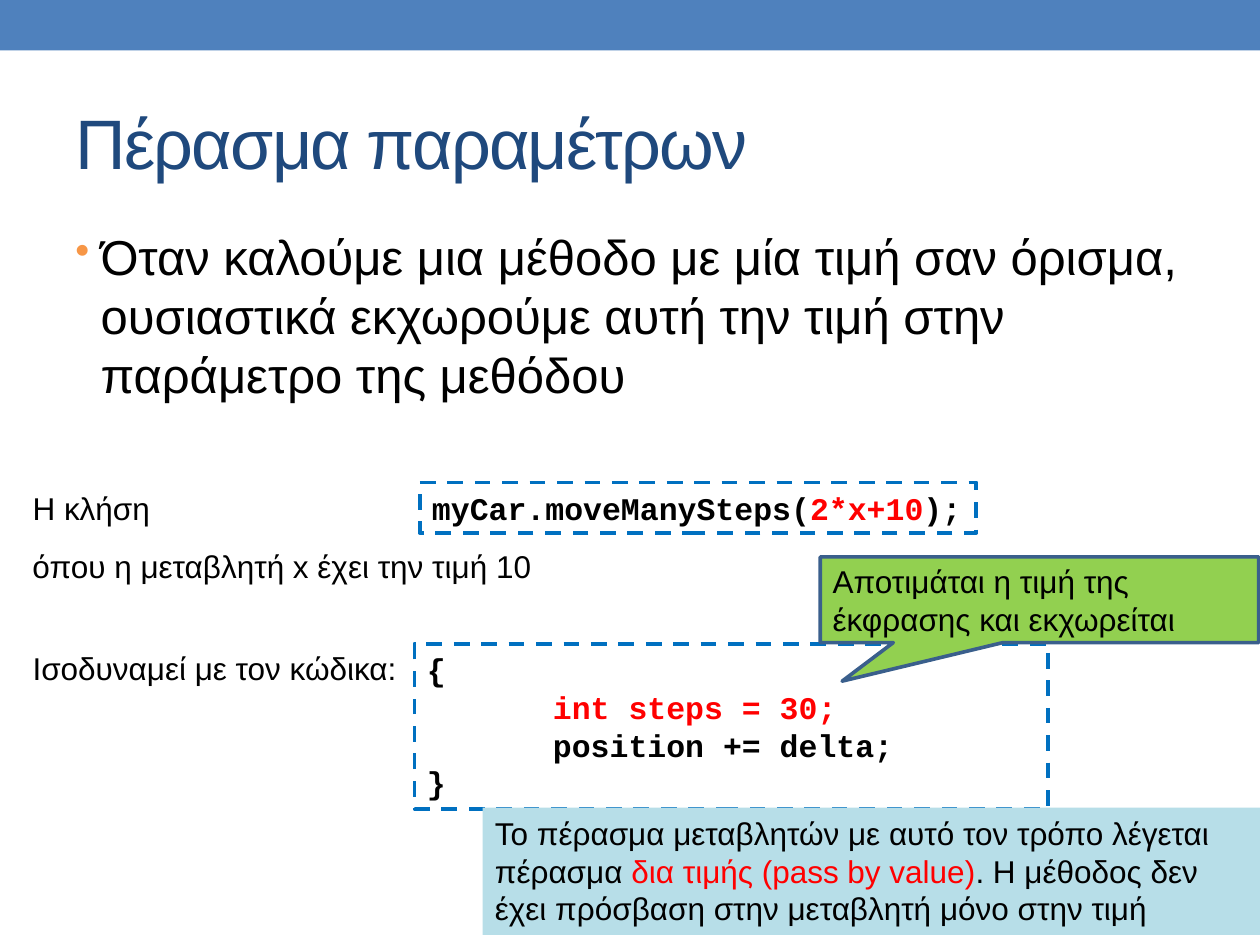
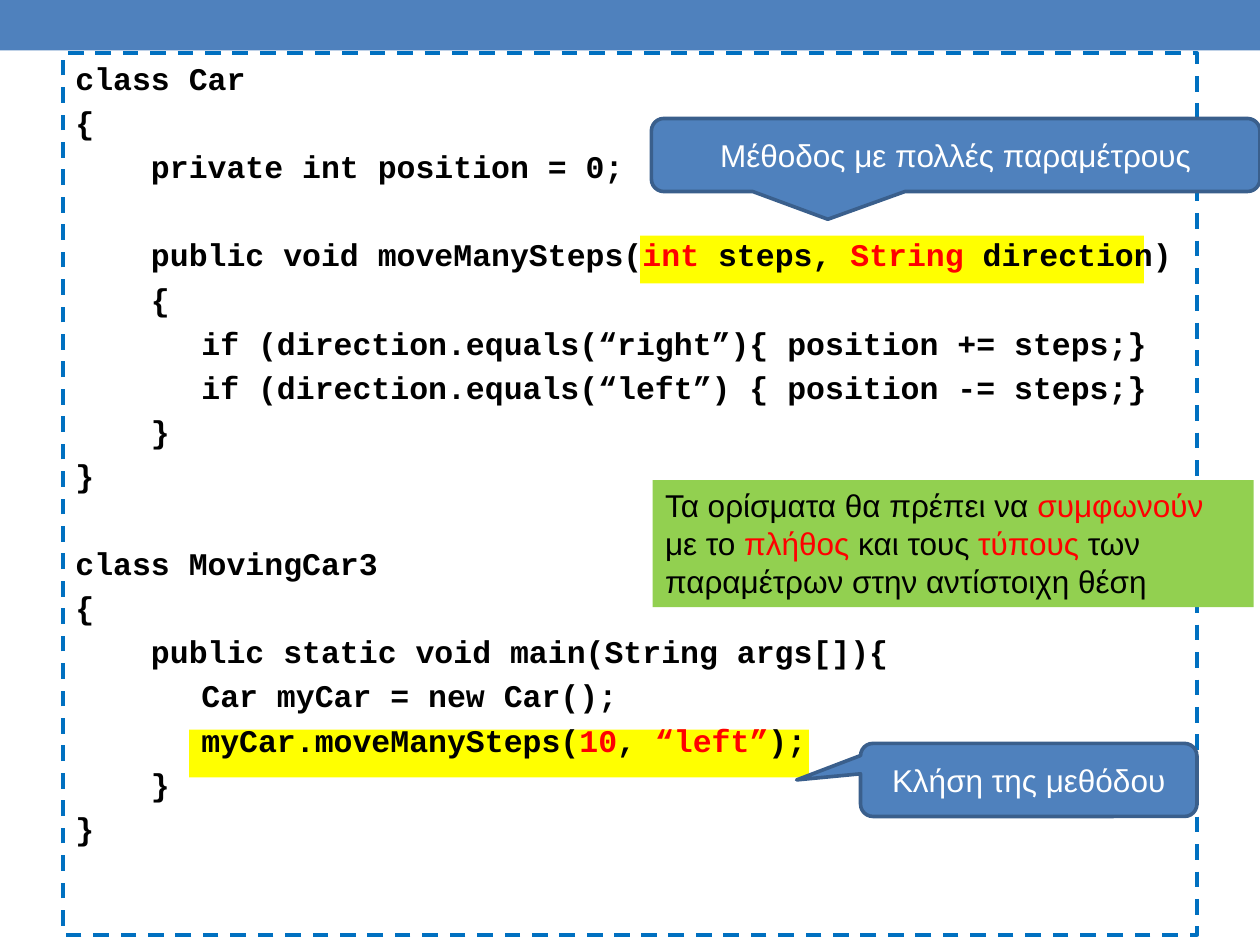
from lxml import etree
from pptx import Presentation
from pptx import util as u
from pptx.dml.color import RGBColor
from pptx.enum import dml, shapes, text
from pptx.oxml.ns import qn

SCALE = 9144  # EMU in one px, 100 px to the inch
HUES = {
    "band": "4F81BD", "title": "1F497D", "bullet": "F79646", "dash": "0070C0",
    "edge": "3A5F8C", "green": "92D050", "pale": "B7DEE8", "mark": "FFFF00",
    "ink": "000000", "red": "FF0000", "white": "FFFFFF",
}
PROSE = {"name": "Arial", "size": u.Pt(18), "bold": False}
CODE = {"name": "Courier New", "size": u.Pt(18), "bold": True}
HEAD = {**PROSE, "size": u.Pt(40)}
POINT = {**PROSE, "size": u.Pt(28)}
STEPS = (0, 60, 100)  # code indents in px
LEAD = 3.6            # points before a code line
SKIP = 28.8           # points before a new block of code

RECT = shapes.MSO_SHAPE.RECTANGLE
SPEECH = shapes.MSO_SHAPE.RECTANGULAR_CALLOUT
ROUND = shapes.MSO_SHAPE.ROUNDED_RECTANGULAR_CALLOUT
LEFT, MID = text.PP_ALIGN.LEFT, text.PP_ALIGN.CENTER


def px(n):
    return u.Emu(n * SCALE)


def hue(name):
    return RGBColor.from_string(HUES[name])


def put(thing, values):
    for key, value in values.items():
        setattr(thing, key, value)


class Deck:
    def __init__(self):
        self.prs = Presentation()
        put(self.prs, {"slide_width": px(1000), "slide_height": px(750)})
        self.slide = None

    def page(self, title=None):
        """Start a slide with its band, and a title if there is one."""
        layout = self.prs.slide_layouts[5 if title else 6]
        self.slide = self.prs.slides.add_slide(layout)
        self.box((0, 0, 1000, 40), fill="band")
        if title:
            head = self.slide.shapes.title
            spots = map(px, (50, 58, 900, 108))
            put(head, dict(zip(("left", "top", "width", "height"), spots)))
            self.frame(head, True, True)
            para = head.text_frame.paragraphs[0]
            self.runs(para, title, HEAD, "title")
            para.runs[0]._r.get_or_add_rPr().set("spc", "-100")

    def frame(self, shape, wrap=True, middle=False):
        anchor = text.MSO_ANCHOR.MIDDLE if middle else text.MSO_ANCHOR.TOP
        put(shape.text_frame, {"word_wrap": wrap, "vertical_anchor": anchor,
                               "auto_size": text.MSO_AUTO_SIZE.NONE})

    def runs(self, para, words, font=PROSE, ink="ink", align=LEFT):
        """Write words split by |, with every second piece in red."""
        para.alignment = align
        for i, piece in enumerate(words.split("|")):
            run = para.add_run()
            run.text = piece
            put(run.font, font)
            run.font.color.rgb = hue("red" if i % 2 else ink)

    def box(self, at, fill=None, line=None, width=2.25, kind=RECT):
        shape = self.slide.shapes.add_shape(kind, *map(px, at))
        shape.shadow.inherit = False
        if fill:
            shape.fill.solid()
            shape.fill.fore_color.rgb = hue(fill)
        else:
            shape.fill.background()
        if line:
            shape.line.color.rgb = hue(line)
            shape.line.width = u.Pt(width)
        else:
            shape.line.fill.background()
        return shape

    def label(self, at, words, font=PROSE, wrap=False):
        shape = self.slide.shapes.add_textbox(*map(px, at))
        self.frame(shape, wrap)
        para = shape.text_frame.paragraphs[0]
        self.runs(para, words, font)
        return para

    def point(self, at, words):
        """Add a text box with one bulleted paragraph."""
        props = self.label(at, words, POINT, True)._p.get_or_add_pPr()
        props.set("marL", str(px(20)))
        props.set("indent", str(px(-20)))
        tint = etree.SubElement(props, qn("a:buClr"))
        etree.SubElement(tint, qn("a:srgbClr"), val=HUES["bullet"])
        etree.SubElement(props, qn("a:buSzPct"), val="85000")
        etree.SubElement(props, qn("a:buChar"), char="•")

    def note(self, at, words, fill):
        shape = self.box(at, fill)
        self.frame(shape)
        self.runs(shape.text_frame.paragraphs[0], words)

    def call(self, at, words, tip, kind=ROUND, fill="band", ink="white",
             align=MID):
        """Add a callout whose tail ends at tip."""
        shape = self.box(at, fill, "edge", 2.08, kind)
        for i, value in enumerate(tip):
            shape.adjustments[i] = value
        self.frame(shape, True, True)
        self.runs(shape.text_frame.paragraphs[0], words, PROSE, ink, align)

    def code(self, at, blocks, lead=0, wrap=True):
        """Add a dashed box of blocks, each a list of (step, line)."""
        shape = self.box(at, line="dash")
        shape.line.dash_style = dml.MSO_LINE.DASH
        self.frame(shape, wrap)
        body = shape.text_frame
        para = None
        for block in blocks:
            for i, (step, line) in enumerate(block):
                if para is None:
                    para = body.paragraphs[0]
                else:
                    para = body.add_paragraph()
                    para.space_before = u.Pt(lead if i else SKIP)
                self.runs(para, line, CODE)
                props = para._p.get_or_add_pPr()
                props.set("marL", str(px(STEPS[step])))
                props.set("indent", "0")


def passing(deck):
    deck.page("Πέρασμα παραμέτρων")
    deck.point((50, 175, 900, 533),
               "Όταν καλούμε μια μέθοδο με μία τιμή σαν όρισμα, ουσιαστικά "
               "εκχωρούμε αυτή την τιμή στην παράμετρο της μεθόδου")
    deck.code((333, 383, 442, 40),
              [[(0, "myCar.moveManySteps(|2*x+10|);")]], wrap=False)
    deck.code((329, 511, 503, 131), [[
        (0, "{"),
        (2, "|int steps = 30;"),
        (2, "position += delta;"),
        (0, "}"),
    ]])
    for top, width, words in (
        (383, 121, "Η κλήση"),
        (510, 312, "Ισοδυναμεί με τον κώδικα:"),
        (429, 420, "όπου η μεταβλητή x έχει την τιμή 10"),
    ):
        deck.label((16, top, width, 40), words)
    deck.call((651, 442, 348, 68),
              "Αποτιμάται η τιμή της έκφρασης και εκχωρείται",
              (-0.45, 0.95), SPEECH, "green", "ink", LEFT)
    deck.note((383, 641, 617, 101),
              "Το πέρασμα μεταβλητών με αυτό τον τρόπο λέγεται πέρασμα "
              "|δια τιμής (pass by value)|. Η μέθοδος δεν έχει πρόσβαση "
              "στην μεταβλητή μόνο στην τιμή", "pale")


def several(deck):
    deck.page()
    for mark in ((150, 579, 492, 38), (508, 187, 400, 38)):
        deck.box(mark, "mark")
    deck.code((50, 42, 900, 700), [
        [
            (0, "class Car"),
            (0, "{"),
            (1, "private int position = 0;"),
        ],
        [
            (1, "public void moveManySteps(|int |steps, |String| direction)"),
            (1, "{"),
            (2, "if (direction.equals(“right”){ position += steps;}"),
            (2, "if (direction.equals(“left”) { position -= steps;}"),
            (1, "}"),
            (0, "}"),
        ],
        [
            (0, "class MovingCar3"),
            (0, "{"),
            (1, "public static void main(String args[]){"),
            (2, "Car myCar = new Car();"),
            (2, "myCar.moveManySteps(|10|, |“left”|);"),
            (1, "}"),
            (0, "}"),
        ],
    ], LEAD)
    deck.call((517, 94, 483, 58), "Μέθοδος με πολλές παραμέτρους",
              (-0.21, 0.88, 0.17))
    deck.call((683, 590, 267, 58), "Κλήση της μεθόδου", (-0.69, 0, 0.17))
    deck.note((518, 381, 477, 101),
              "Τα ορίσματα θα πρέπει να |συμφωνούν| με το |πλήθος |και τους "
              "|τύπους |των παραμέτρων στην αντίστοιχη θέση", "green")


def main():
    deck = Deck()
    passing(deck)
    several(deck)
    deck.prs.save("out.pptx")


if __name__ == "__main__":
    main()
